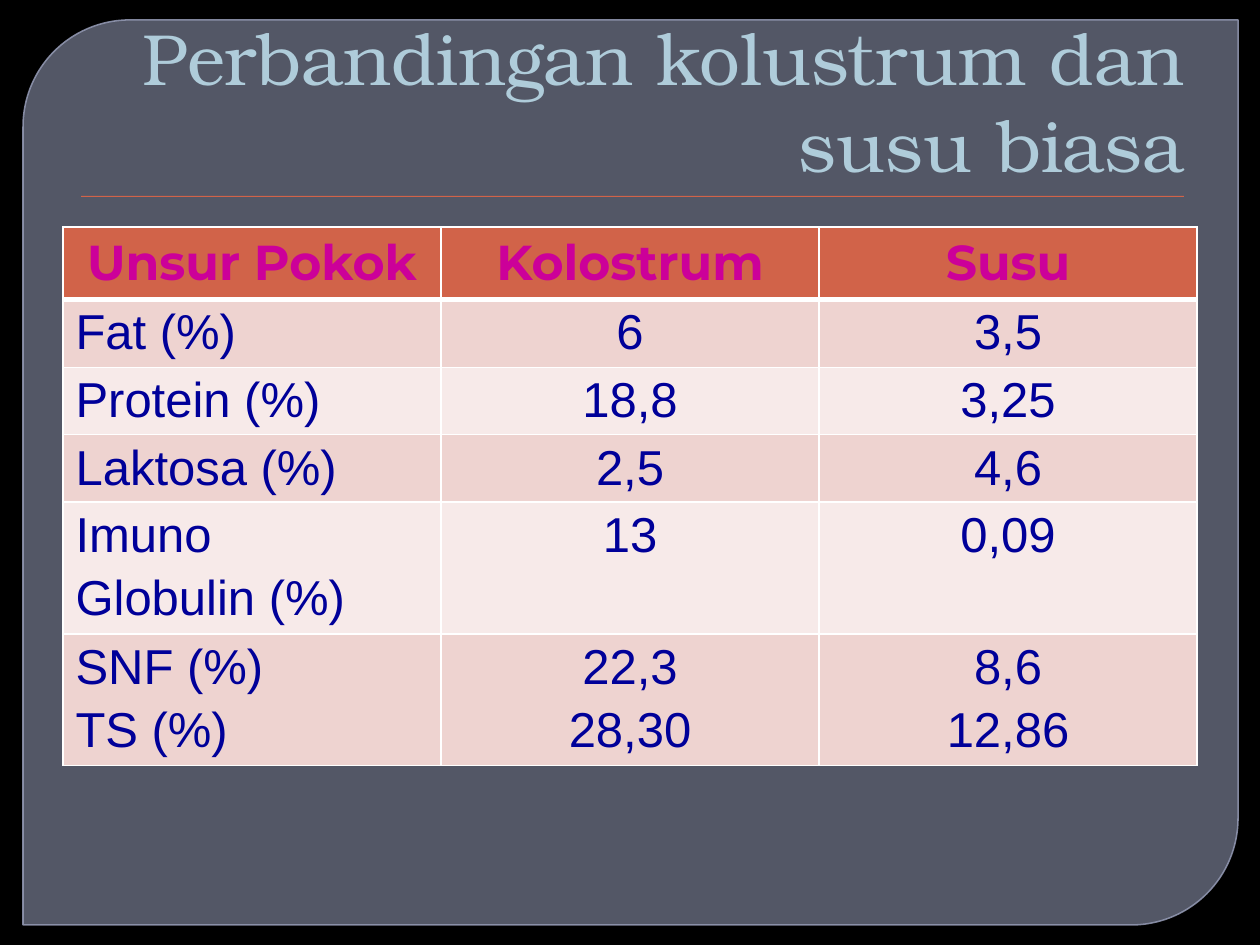
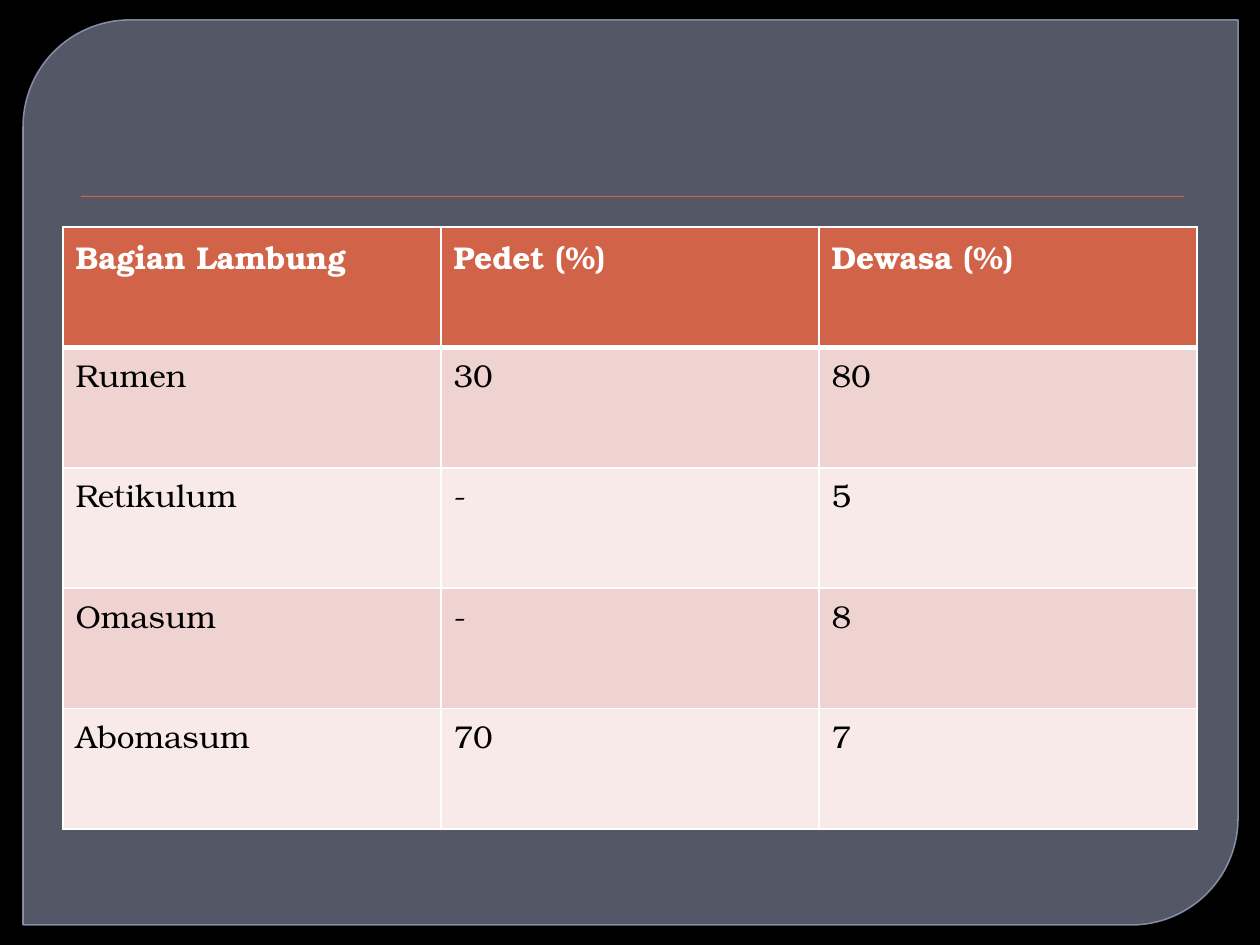
"""Two slides with tables on milk make-up and stomach parts."""
from lxml import etree
from pptx import Presentation, util as u
from pptx.dml.color import RGBColor
from pptx.enum import shapes, text
from pptx.oxml import ns

HUE = {
    "back": "000000", "panel": "80869E", "edge": "9298B2", "rust": "D16349",
    "title": "AFCCDA", "white": "FFFFFF", "pink": "EED3D0", "pale": "F7EAE9",
    "berry": "CC0099", "navy": "000099", "black": "000000",
}
SERIF = "TeX Gyre Bonum"
LEFT, RIGHT, MID = text.PP_ALIGN.LEFT, text.PP_ALIGN.RIGHT, text.PP_ALIGN.CENTER
TITLE = {"name": SERIF, "size": u.Pt(41.4), "bold": False, "hue": "title"}

SLIDES = [
    {
        "title": "Perbandingan kolustrum dan susu biasa",
        "rows": [
            ("Unsur Pokok", "Kolostrum", "Susu"),
            ("Fat (%)", "6", "3,5"),
            ("Protein (%)", "18,8", "3,25"),
            ("Laktosa (%)", "2,5", "4,6"),
            ("Imuno\nGlobulin (%)", "13", "0,09"),
            ("SNF (%)\nTS (%)", "22,3\n28,30", "8,6\n12,86"),
        ],
        "tall": 537,
        "parts": [71, 68, 67, 67, 132, 132],
        "head": {"name": "Montserrat", "size": u.Pt(28), "bold": True, "hue": "berry"},
        "body": {"name": "Arial", "size": u.Pt(28), "bold": False, "hue": "navy"},
        "align": {"head": (MID, MID, MID), "body": (LEFT, MID, MID)},
    },
    {
        "title": None,
        "rows": [
            ("Bagian Lambung", "Pedet (%)", "Dewasa (%)"),
            ("Rumen", "30", "80"),
            ("Retikulum", "-", "5"),
            ("Omasum", "-", "8"),
            ("Abomasum", "70", "7"),
        ],
        "tall": 602,
        "parts": [1] * 5,
        "head": {"name": SERIF, "size": u.Pt(18), "bold": True, "hue": "white"},
        "body": {"name": SERIF, "size": u.Pt(18), "bold": False, "hue": "black"},
        "align": {"head": (LEFT,) * 3, "body": (LEFT,) * 3},
    },
]


def px(n):
    return round(n * 914400 / 126)


def box(*sides):
    return [px(n) for n in sides]


def rgb(key):
    return RGBColor.from_string(HUE[key])


def put(item, values):
    for key, value in values.items():
        setattr(item, key, value)


def paint(fill, key):
    fill.solid()
    fill.fore_color.rgb = rgb(key)


def style(para, form, align):
    para.alignment = align
    put(para.font, {key: form[key] for key in ("name", "size", "bold")})
    para.font.color.rgb = rgb(form["hue"])
    for run in para.runs:
        put(run.font, {key: form[key] for key in ("name", "size", "bold")})
        run.font.color.rgb = rgb(form["hue"])


def frame(slide):
    paint(slide.background.fill, "back")
    kind = shapes.MSO_SHAPE
    panel = slide.shapes.add_shape(kind.ROUND_2_DIAG_RECTANGLE, *box(23, 20, 1215, 905))
    panel.adjustments[0], panel.adjustments[1] = 0.118, 0
    paint(panel.fill, "panel")
    panel.line.color.rgb = rgb("edge")
    panel.line.width = u.Pt(0.87)
    for tone, part in zip(panel._element.iter(ns.qn("a:srgbClr")), (65, 88)):
        etree.SubElement(tone, ns.qn("a:alpha"), val=str(part * 1000))
    rule = slide.shapes.add_shape(kind.RECTANGLE, *box(81, 196, 1103, 1))
    paint(rule.fill, "rust")
    rule.line.fill.background()
    for shape in (panel, rule):
        shape.shadow.inherit = False


def head(slide, words):
    title = slide.shapes.title
    put(title, dict(zip(("left", "top", "width", "height"), box(63, 35, 1134, 158))))
    area = title.text_frame
    area.text = words
    put(area, {"word_wrap": True, "auto_size": text.MSO_AUTO_SIZE.NONE,
               "vertical_anchor": text.MSO_ANCHOR.BOTTOM})
    style(area.paragraphs[0], TITLE, RIGHT)
    tree = slide.shapes._spTree
    tree.append(title._element)


def edge(cell, row):
    wide = {"L": 1, "R": 1, "T": 3 if row == 1 else 1, "B": 1 if row else 3}
    props = cell._tc.get_or_add_tcPr()
    for spot, (side, size) in enumerate(wide.items()):
        line = etree.Element(ns.qn("a:ln" + side), w=str(u.Pt(size)))
        fill = etree.SubElement(line, ns.qn("a:solidFill"))
        etree.SubElement(fill, ns.qn("a:srgbClr"), val=HUE["white"])
        props.insert(spot, line)


def grid(slide, data):
    rows = data["rows"]
    place = box(63, 227, 1134, data["tall"])
    table = slide.shapes.add_table(len(rows), len(rows[0]), *place).table
    unit = place[3] / sum(data["parts"])
    for r, (row, part) in enumerate(zip(rows, data["parts"])):
        table.rows[r].height = round(unit * part)
        role = "body" if r else "head"
        shade = ("pale", "pink")[r % 2] if r else "rust"
        for c, words in enumerate(row):
            cell = table.cell(r, c)
            cell.text = words
            paint(cell.fill, shade)
            edge(cell, r)
            for n, para in enumerate(cell.text_frame.paragraphs):
                style(para, data[role], data["align"][role][c])
                if n:
                    para.space_before = u.Pt(5)


def main():
    deck = Presentation()
    put(deck, {"slide_width": px(1260), "slide_height": px(945)})
    for data in SLIDES:
        slide = deck.slides.add_slide(deck.slide_layouts[5 if data["title"] else 6])
        frame(slide)
        if data["title"]:
            head(slide, data["title"])
        grid(slide, data)
    deck.save("out.pptx")


if __name__ == "__main__":
    main()
